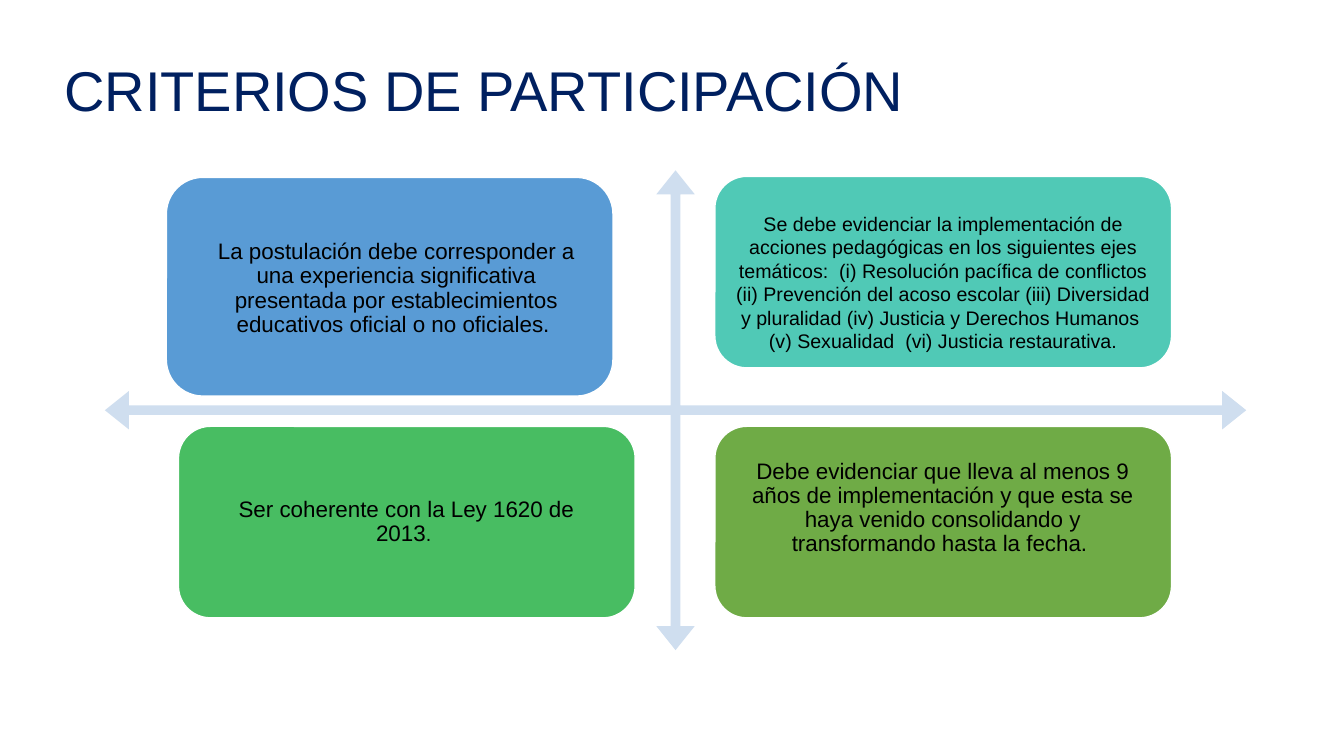
from pptx import Presentation
from pptx import util as u
from pptx.dml.color import RGBColor
from pptx.enum import shapes, text

COLORS = {
    "navy": "002060", "black": "000000", "white": "FFFFFF", "axes": "CFDEEF",
    "blue": "599BD5", "teal": "50C9B6", "green": "48BD62", "olive": "6FAB46",
}
TITLE = "CRITERIOS DE PARTICIPACIÓN"
LEFT, RIGHT, TOP, BOTTOM = 1.77, 7.09, 1.75, 4.23
CARD_WIDTH, CARD_HEIGHT = 4.53, 1.9
CRITERIA = [
    {"card": (1.65, 1.76, 4.43, 2.17), "color": "blue",
     "label": (1.89, 1.95, 4.08, 1.83), "inset": 0.07, "spacing": 0.9,
     "spans": [("La postulación debe corresponder a una experiencia significativa "
                "presentada por establecimientos educativos oficial o no oficiales. ", 16)]},
    {"card": (RIGHT, TOP, CARD_WIDTH, CARD_HEIGHT), "color": "teal",
     "label": (7.2, 1.85, 4.31, 1.9), "inset": 0.07, "spacing": 1.0,
     "spans": [("Se debe evidenciar la implementación de acciones pedagógicas en los "
                "siguientes ejes temáticos:  (i) Resolución pacífica de conflictos "
                "(ii) Prevención del acoso escolar (iii) Diversidad y pluralidad "
                "(iv) Justicia y Derechos Humanos  (v) Sexualidad  "
                "(vi) Justicia restaurativa.", 14)]},
    {"card": (LEFT, BOTTOM, CARD_WIDTH, CARD_HEIGHT), "color": "green",
     "label": (1.99, 4.32, 4.08, 1.72), "inset": 0.08, "spacing": 0.9,
     "spans": [("Ser coherente con la Ley 1620 de 2013", 16), (". ", 14)]},
    {"card": (RIGHT, BOTTOM, CARD_WIDTH, CARD_HEIGHT), "color": "olive",
     "label": (7.31, 4.18, 4.08, 1.72), "inset": 0.08, "spacing": 0.9,
     "spans": [("Debe evidenciar que lleva al menos 9 años de implementación y que "
                "esta se haya venido consolidando y transformando hasta la fecha. ", 16)]},
]


def rgb(name):
    return RGBColor.from_string(COLORS[name])


def inches(lengths):
    return [u.Inches(length) for length in lengths]


def add_text(page, spans, area, color="black", inset=(0.1, 0.05), spacing=0.9,
             align=text.PP_ALIGN.CENTER):
    frame = page.shapes.add_textbox(*inches(area)).text_frame
    frame.word_wrap = True
    frame.vertical_anchor = text.MSO_ANCHOR.MIDDLE
    frame.margin_left = frame.margin_right = u.Inches(inset[0])
    frame.margin_top = frame.margin_bottom = u.Inches(inset[1])
    para = frame.paragraphs[0]
    para.alignment = align
    para.line_spacing = spacing
    for words, size in spans:
        span = para.add_run()
        span.text = words
        span.font.name = "Arial"
        span.font.size = u.Pt(size)
        span.font.color.rgb = rgb(color)


def add_shape(page, kind, area, color, adjustments, outline=None):
    shape = page.shapes.add_shape(kind, *inches(area))
    shape.shadow.inherit = False
    for index, value in enumerate(adjustments):
        shape.adjustments[index] = value
    shape.fill.solid()
    shape.fill.fore_color.rgb = rgb(color)
    if outline:
        shape.line.color.rgb = rgb(outline)
        shape.line.width = u.Pt(1)
    else:
        shape.line.fill.background()


def main():
    deck = Presentation()
    deck.slide_width, deck.slide_height = inches((13.33, 7.5))
    page = deck.slides.add_slide(deck.slide_layouts[6])
    add_text(page, [(TITLE, 40)], (0.54, 0.67, 11.5, 0.51), color="navy",
             align=text.PP_ALIGN.LEFT)
    add_shape(page, shapes.MSO_SHAPE.QUAD_ARROW, (1.04, 1.69, 11.32, 4.76), "axes",
              (0.02, 0.04, 0.05))
    for item in CRITERIA:
        add_shape(page, shapes.MSO_SHAPE.ROUNDED_RECTANGLE, item["card"], item["color"],
                  (0.167,), outline="white")
        add_text(page, item["spans"], item["label"], inset=(item["inset"], item["inset"]),
                 spacing=item["spacing"])
    deck.save("out.pptx")


if __name__ == "__main__":
    main()
